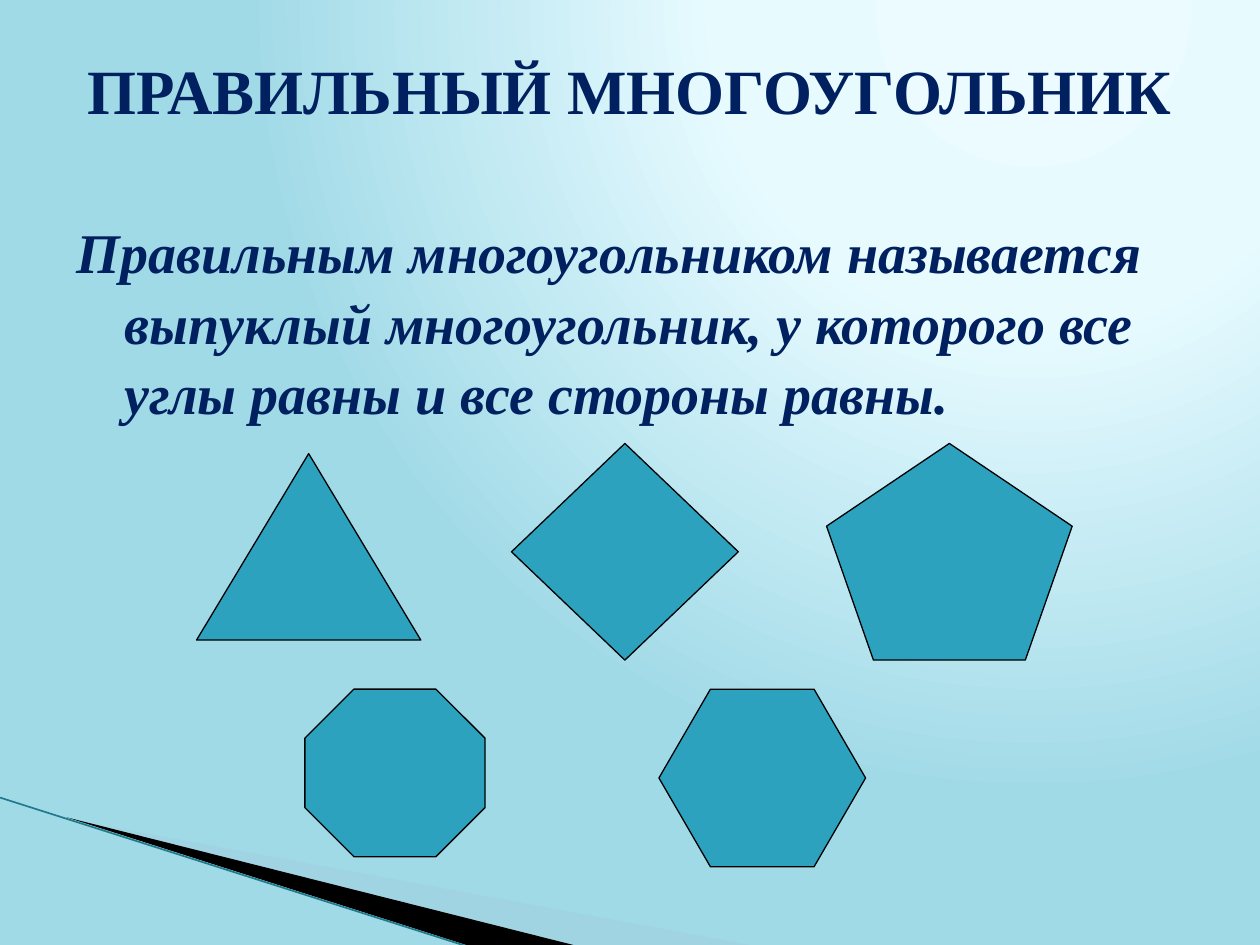
from lxml.etree import SubElement
from pptx import Presentation
from pptx.dml.color import RGBColor
from pptx.enum.shapes import MSO_CONNECTOR, MSO_SHAPE
from pptx.enum.text import MSO_ANCHOR, PP_ALIGN
from pptx.oxml.ns import qn
from pptx.util import Inches, Pt

NAVY = RGBColor(0x00, 0x20, 0x60)
TEAL = RGBColor(0x2D, 0xA2, 0xBF)
DARK_TEAL = RGBColor(0x1F, 0x7A, 0x8C)
PALE_BLUE = RGBColor(0xA0, 0xCB, 0xDC)
BLACK = RGBColor(0, 0, 0)
GLOW = [(0, RGBColor(0xEB, 0xFB, 0xFF)),
        (40, RGBColor(0xE7, 0xFB, 0xFF)),
        (100, RGBColor(0xA1, 0xDA, 0xE7))]

prs = Presentation()
prs.slide_width, prs.slide_height = Inches(10), Inches(7.5)
s = prs.slides.add_slide(prs.slide_layouts[6])


def share(x, y):
    """Turn percentages of the slide's width and height into lengths."""
    return int(prs.slide_width * x / 100), int(prs.slide_height * y / 100)


def add_text(x, y, w, h, text, size, margin_top):
    tf = s.shapes.add_textbox(*share(x, y), *share(w, h)).text_frame
    tf.word_wrap = True
    tf.vertical_anchor = MSO_ANCHOR.TOP
    tf.margin_top = Inches(margin_top)
    tf.text = text
    p = tf.paragraphs[0]
    font = p.runs[0].font
    font.name, font.size, font.bold = "Times New Roman", Pt(size), True
    font.color.rgb = NAVY
    return p


# Background: a circular glow from the upper right
s.background.fill.gradient()
grad = s.background.fill._xPr.find(qn("a:gradFill"))
for child in list(grad):
    grad.remove(child)
stops = SubElement(grad, qn("a:gsLst"))
for position, color in GLOW:
    stop = SubElement(stops, qn("a:gs"), pos=str(position * 1000))
    SubElement(stop, qn("a:srgbClr"), val=str(color))
circle = SubElement(grad, qn("a:path"), path="circle")
SubElement(circle, qn("a:fillToRect"), l="65000", t="0", r="0", b="98000")

# Corner wedges and the line along them
wedges = [
    (PALE_BLUE, 40, [(5.5, 86.7), (59.5, 100), (45.6, 100)]),
    (BLACK, 100, [(5.3, 86.5), (45.5, 100), (37, 100)]),
]
for color, opacity, points in wedges:
    corners = [share(*point) for point in points]
    builder = s.shapes.build_freeform(*corners[0])
    builder.add_line_segments(corners[1:], close=True)
    wedge = builder.convert_to_shape()
    wedge.shadow.inherit = False
    wedge.fill.solid()
    wedge.fill.fore_color.rgb = color
    wedge.line.fill.background()
    if opacity < 100:
        clr = wedge.fill._xPr.find(qn("a:solidFill"))[0]
        SubElement(clr, qn("a:alpha"), val=str(opacity * 1000))

edge = s.shapes.add_connector(MSO_CONNECTOR.STRAIGHT, *share(0, 84.4), *share(37.2, 100.2))
edge.line.color.rgb = DARK_TEAL
edge.line.width = Pt(0.95)
SubElement(edge._element.spPr, qn("a:effectLst"))

# Title and definition
title = add_text(5, 4, 90, 16.67, "ПРАВИЛЬНЫЙ МНОГОУГОЛЬНИК", 36, 0.11)
title.alignment = PP_ALIGN.CENTER

definition = add_text(
    5.1, 21.6, 89.4, 20,
    "Правильным многоугольником называется выпуклый многоугольник, "
    "у которого все углы равны и все стороны равны.", 32, 0.08)
definition.line_spacing = 1.05
definition.runs[0].font.italic = True
pPr = definition._p.get_or_add_pPr()
pPr.set("marL", str(Inches(0.38)))
pPr.set("indent", str(Inches(-0.38)))

# Regular polygons: three in the upper row, two below
LEFT, COLUMN = 15.6, 25
UPPER, LOWER = 46.93, 72.93
polygons = [
    (MSO_SHAPE.ISOSCELES_TRIANGLE, LEFT, 48, 17.8, 19.73),
    (MSO_SHAPE.DIAMOND, LEFT + COLUMN, UPPER, 18, 22.93),
    (MSO_SHAPE.REGULAR_PENTAGON, LEFT + 2 * COLUMN, UPPER, 19.5, 22.93),
    (MSO_SHAPE.HEXAGON, 52.3, LOWER, 16.4, 18.8),
    (MSO_SHAPE.OCTAGON, 24.2, LOWER, 14.3, 17.73),
]
for kind, x, y, w, h in polygons:
    polygon = s.shapes.add_shape(kind, *share(x, y), *share(w, h))
    polygon.shadow.inherit = False
    polygon.fill.solid()
    polygon.fill.fore_color.rgb = TEAL
    polygon.line.color.rgb = BLACK
    polygon.line.width = Pt(0.75)
    if kind == MSO_SHAPE.HEXAGON:
        polygon.adjustments[0] = 0.29

prs.save("out.pptx")
